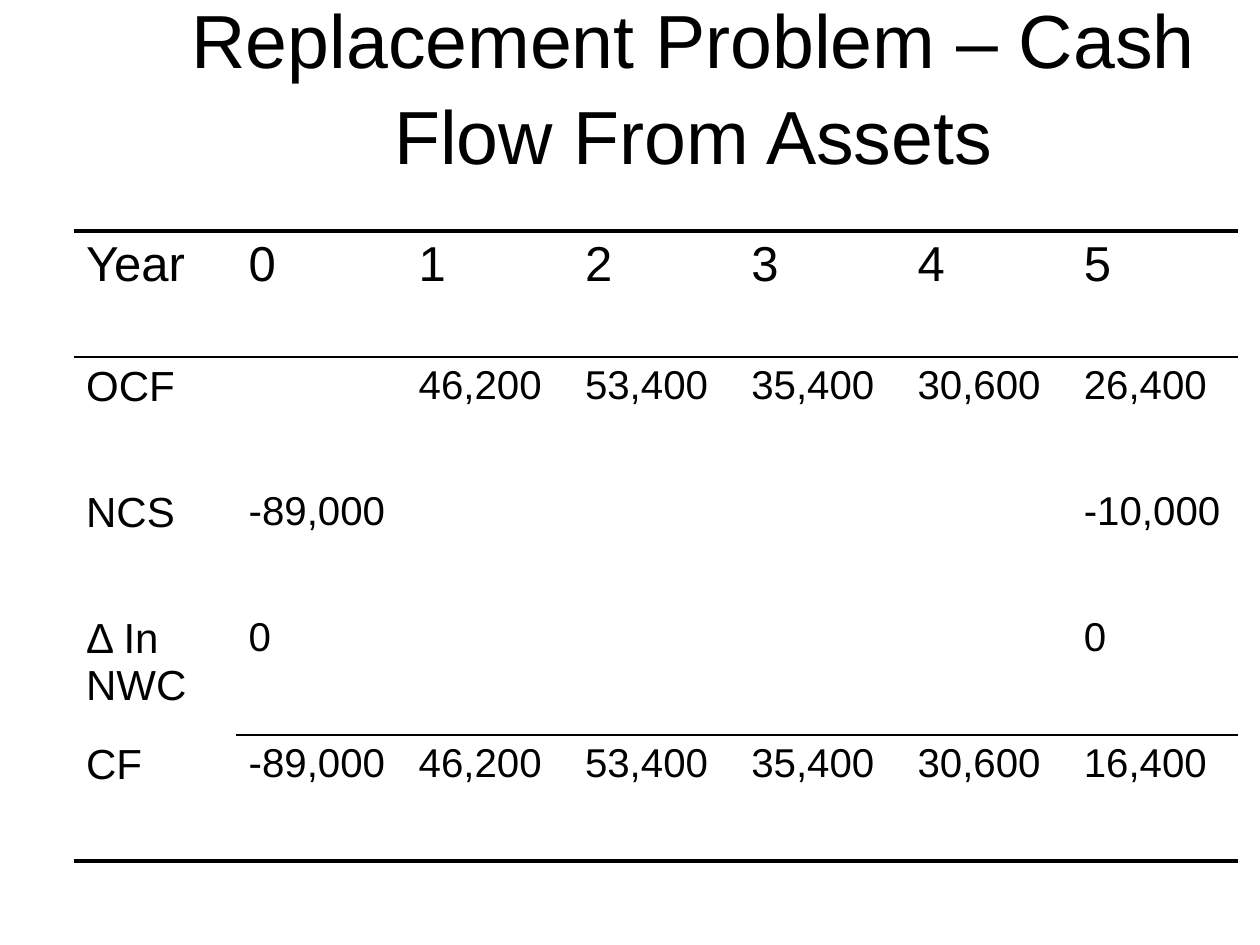
import pptx
import pptx.util
import pptx.dml.color
import pptx.enum.text
from lxml import etree

Pt = pptx.util.Pt
COLORS = {"ink": "000000", "paper": "FFFFFF"}
FONT = "Arial"
A = "http://schemas.openxmlformats.org/drawingml/2006/main"
THICK, THIN = 2.25, 1
WIDTHS = [92.88, 97.2] + [95.04] * 5
ROWS = [
    ["Year", "0", "1", "2", "3", "4", "5"],
    ["OCF", "", "46,200", "53,400", "35,400", "30,600", "26,400"],
    ["NCS", "-89,000", "", "", "", "", "-10,000"],
    ["Δ In NWC", "0", "", "", "", "", "0"],
    ["CF", "-89,000", "46,200", "53,400", "35,400", "30,600", "16,400"],
]


def style(p, size):
    """Set the font of a paragraph."""
    p.font.name, p.font.size = FONT, Pt(size)
    p.font.color.rgb = pptx.dml.color.RGBColor.from_string(COLORS["ink"])


def set_borders(cell, top, bottom):
    """Draw the top and bottom rules of a cell and clear its sides."""
    tcPr = cell._tc.get_or_add_tcPr()
    sides = {"lnL": 0, "lnR": 0, "lnT": top, "lnB": bottom}
    for i, (tag, width) in enumerate(sides.items()):
        ln = etree.Element(f"{{{A}}}{tag}", w=str(Pt(width)))
        if width:
            fill = etree.SubElement(ln, f"{{{A}}}solidFill")
            etree.SubElement(fill, f"{{{A}}}srgbClr", val=COLORS["ink"])
        else:
            etree.SubElement(ln, f"{{{A}}}noFill")
        tcPr.insert(i, ln)


def add_title(s, text, x, y, w, h):
    """Place the centred title in its box."""
    tf = s.shapes.add_textbox(Pt(x), Pt(y), Pt(w), Pt(h)).text_frame
    tf.word_wrap = True
    tf.vertical_anchor = pptx.enum.text.MSO_ANCHOR.MIDDLE
    p = tf.paragraphs[0]
    p.text = text
    p.alignment = pptx.enum.text.PP_ALIGN.CENTER
    p.line_spacing = 1.06
    style(p, 43)


def add_cash_flow_table(s, x, y, h):
    """Place the cash flow table with its horizontal rules."""
    last = len(ROWS) - 1
    frame = s.shapes.add_table(len(ROWS), len(WIDTHS), Pt(x), Pt(y), Pt(sum(WIDTHS)), Pt(h))
    table = frame.table
    table.first_row = table.horz_banding = False
    for column, width in zip(table.columns, WIDTHS):
        column.width = Pt(width)
    for i, row in enumerate(ROWS):
        for j, text in enumerate(row):
            cell = table.cell(i, j)
            cell.fill.background()
            total_rule = THIN if j else 0
            rules = [THICK, THIN, 0, 0, total_rule, THICK]
            set_borders(cell, rules[i], rules[i + 1])
            p = cell.text_frame.paragraphs[0]
            p.text = text
            style(p, 28 if i == 0 else 24 if j == 0 else 23)
    assert last == 4


def main():
    """Build and save the slide."""
    prs = pptx.Presentation()
    prs.slide_width, prs.slide_height = Pt(720), Pt(540)
    s = prs.slides.add_slide(prs.slide_layouts[6])
    s.background.fill.solid()
    s.background.fill.fore_color.rgb = pptx.dml.color.RGBColor.from_string(COLORS["paper"])
    add_title(s, "Replacement Problem – Cash Flow From Assets", 60, 12, 672, 72)
    add_cash_flow_table(s, 42, 132, 360)
    prs.save("out.pptx")


if __name__ == "__main__":
    main()
